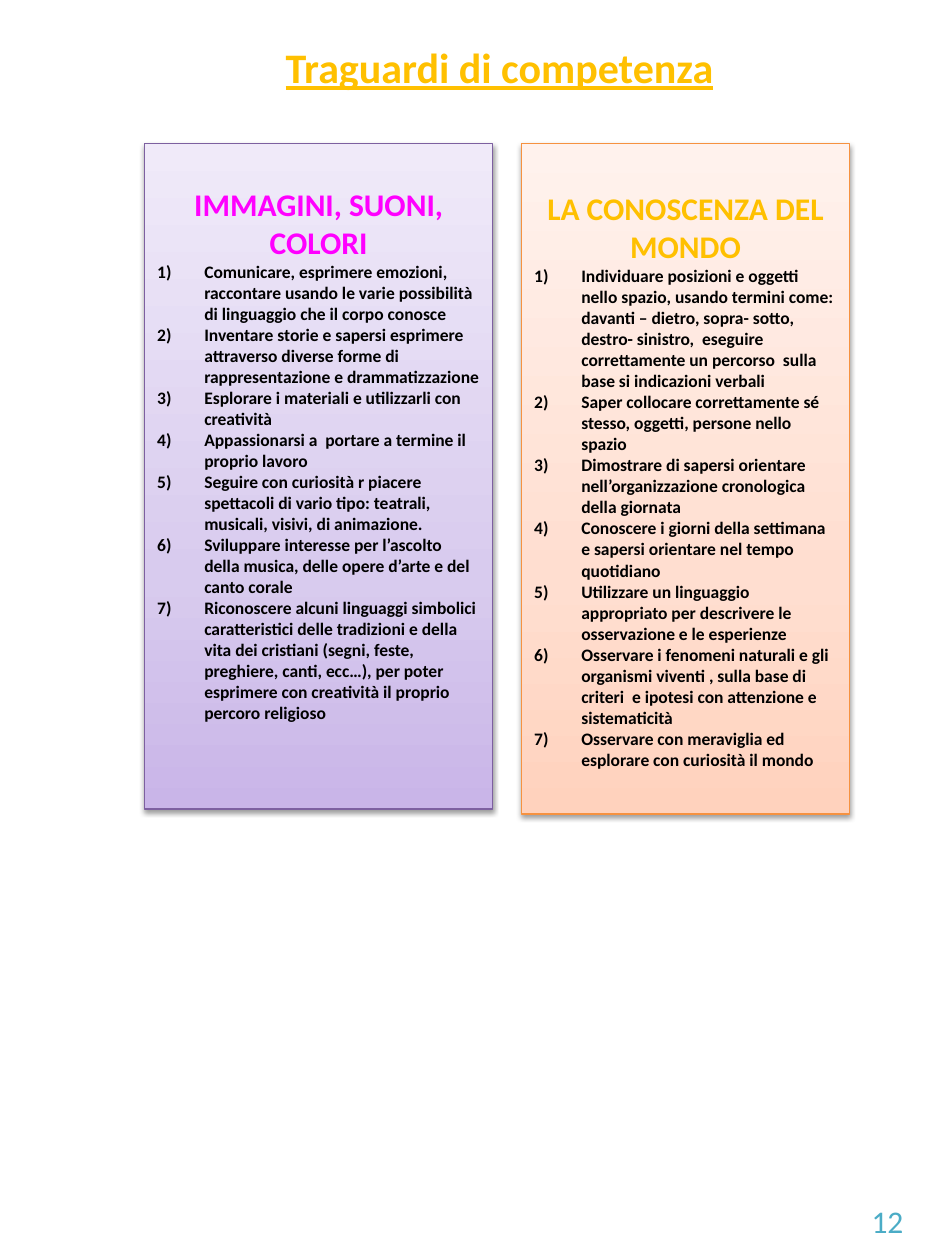
from copy import deepcopy
from lxml.etree import SubElement
from pptx import Presentation
from pptx.dml.color import RGBColor as Rgb
from pptx.enum.shapes import MSO_SHAPE as Kind
from pptx.enum.text import MSO_ANCHOR as Anchor, MSO_AUTO_SIZE as Fit, PP_ALIGN as Align
from pptx.oxml.ns import qn
from pptx.util import Cm, Pt

FONT = "Calibri"
HUES = {
    "gold": "FFC000", "pink": "FF00FF", "teal": "4BACC6", "black": "000000",
    "violet": "7D60A0", "orange": "F69240",
}
FADES = {
    "violet": ("C9B5E8", "D8CBEE", "F0EAF9"),
    "orange": ("FFD2BD", "FFDED0", "FFF2ED"),
}
STOPS = (0, 0.35, 1)

ARTS = [
    "Comunicare, esprimere emozioni, raccontare usando le varie possibilità di linguaggio che il corpo conosce",
    "Inventare storie e sapersi esprimere attraverso diverse forme di rappresentazione e drammatizzazione",
    "Esplorare i materiali e utilizzarli con creatività",
    "Appassionarsi a  portare a termine il proprio lavoro",
    "Seguire con curiosità r piacere spettacoli di vario tipo: teatrali, musicali, visivi, di animazione.",
    "Sviluppare interesse per l’ascolto della musica, delle opere d’arte e del canto corale",
    "Riconoscere alcuni linguaggi simbolici  caratteristici delle tradizioni e della vita dei cristiani "
    "(segni, feste, preghiere, canti, ecc…), per poter esprimere con creatività il proprio percoro religioso",
]
WORLD = [
    "Individuare posizioni e oggetti nello spazio, usando termini come: davanti – dietro, sopra- sotto, "
    "destro- sinistro,  eseguire correttamente un percorso  sulla base si indicazioni verbali",
    "Saper collocare correttamente sé stesso, oggetti, persone nello spazio",
    "Dimostrare di sapersi orientare nell’organizzazione cronologica della giornata",
    "Conoscere i giorni della settimana e sapersi orientare nel tempo quotidiano",
    "Utilizzare un linguaggio appropriato per descrivere le osservazione e le esperienze",
    "Osservare i fenomeni naturali e gli organismi viventi , sulla base di criteri  e ipotesi con attenzione "
    "e sistematicità",
    "Osservare con meraviglia ed esplorare con curiosità il mondo",
]


def place(shape, box):
    shape.left, shape.top, shape.width, shape.height = (Cm(n) for n in box)


def add_run(para, text, size, hue, bold=False, line=False):
    run = para.add_run()
    run.text = text
    font = run.font
    font.name, font.size, font.bold, font.underline = FONT, Pt(size), bold, line
    font.color.rgb = Rgb.from_string(HUES[hue])


def set_frame(frame, wrap):
    frame.word_wrap = wrap
    frame.auto_size = Fit.NONE
    frame.vertical_anchor = Anchor.TOP


def number(para):
    props = para._p.get_or_add_pPr()
    props.set("marL", str(Cm(0.95)))
    props.set("indent", str(-Cm(0.95)))
    SubElement(props, qn("a:buFont"), typeface="+mj-lt")
    SubElement(props, qn("a:buAutoNum"), type="arabicParenR")


def fade(shape, hues):
    fill = shape.fill
    fill.gradient()
    fill.gradient_angle = 90
    first = next(shape._element.iter(qn("a:gs")))
    first.addnext(deepcopy(first))
    for stop, pos, hue in zip(fill.gradient_stops, STOPS, hues):
        stop.position = pos
        stop.color.rgb = Rgb.from_string(hue)


def shade(shape):
    shape.shadow.inherit = False
    effect = shape._element.spPr.find(qn("a:effectLst"))
    outer = SubElement(effect, qn("a:outerShdw"), blurRad=str(Pt(3.1)), dist=str(Pt(1.6)),
                       dir="5400000", rotWithShape="0")
    color = SubElement(outer, qn("a:srgbClr"), val=HUES["black"])
    SubElement(color, qn("a:alpha"), val="38000")


def add_title(slide, box):
    title = slide.shapes.title
    place(title, box)
    set_frame(title.text_frame, False)
    para = title.text_frame.paragraphs[0]
    para.alignment = Align.CENTER
    add_run(para, "Traguardi di competenza", 24, "gold", True, True)


def add_panel(slide, box, tone, inset, head, hue, goals):
    panel = slide.shapes.add_shape(Kind.RECTANGLE, *(Cm(n) for n in box))
    fade(panel, FADES[tone])
    panel.line.color.rgb = Rgb.from_string(HUES[tone])
    panel.line.width = Pt(0.75)
    shade(panel)
    frame = panel.text_frame
    set_frame(frame, True)
    frame.margin_top = Cm(inset)
    # Heading
    para = frame.paragraphs[0]
    para.alignment = Align.CENTER
    add_run(para, head, 18, hue, True)
    # Numbered goals
    for goal in goals:
        para = frame.add_paragraph()
        para.alignment = Align.LEFT
        number(para)
        add_run(para, goal, 10, "black", True)


def add_page(slide, box, text):
    page = slide.shapes.add_textbox(*(Cm(n) for n in box))
    set_frame(page.text_frame, True)
    add_run(page.text_frame.paragraphs[0], text, 18, "teal")


def main():
    deck = Presentation()
    deck.slide_width, deck.slide_height = Cm(19.05), Cm(25.4)
    slide = deck.slides.add_slide(deck.slide_layouts[5])
    add_title(slide, (5.46, 0.71, 9.22, 2.13))
    add_panel(slide, (10.52, 2.9, 6.6, 13.51), "orange", 0.92,
              "LA CONOSCENZA DEL MONDO", "gold", WORLD)
    add_panel(slide, (2.92, 2.9, 7.01, 13.41), "violet", 0.83,
              "IMMAGINI, SUONI, COLORI", "pink", ARTS)
    add_page(slide, (17.32, 24.1, 1.4, 1.02), "12")
    deck.save("out.pptx")


if __name__ == "__main__":
    main()
